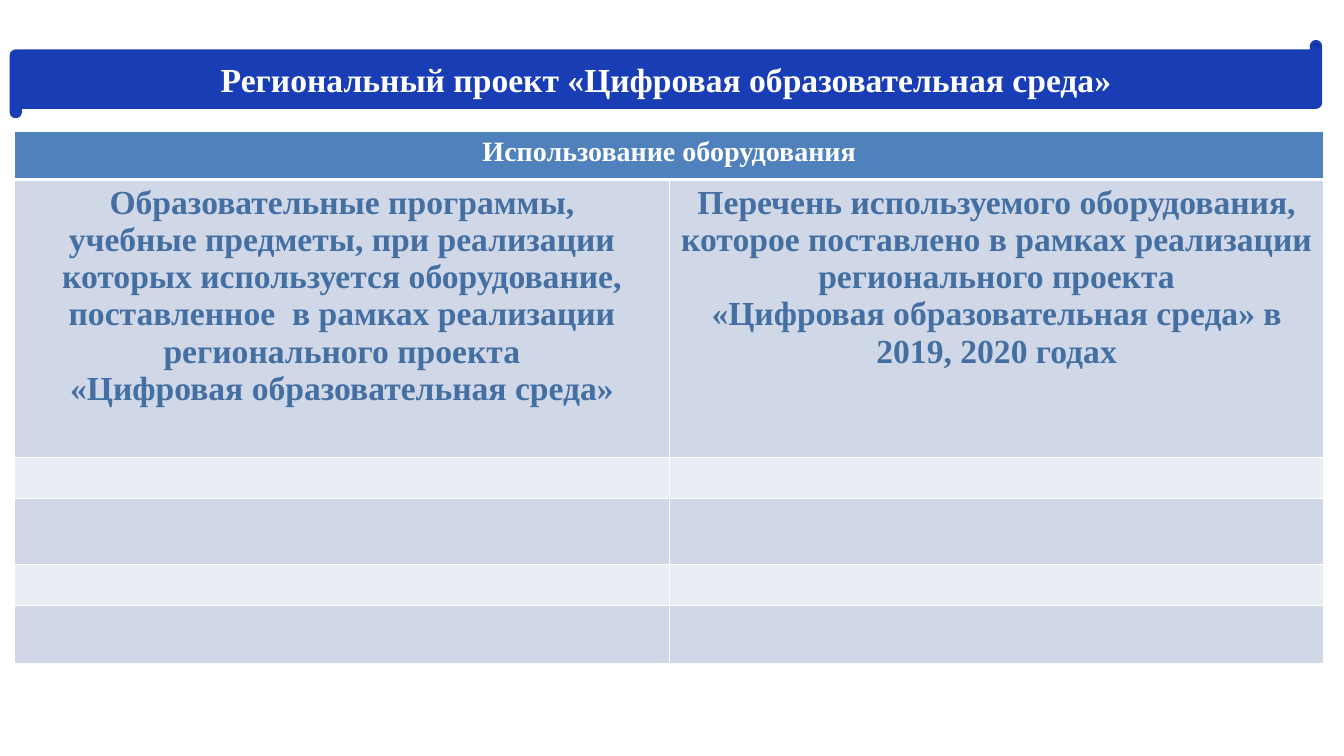
from lxml import etree
from pptx import Presentation
from pptx.dml.color import RGBColor
from pptx.enum import shapes, text
from pptx.oxml import ns
from pptx.util import Pt

FONT = "Times New Roman"
WHITE = RGBColor(0xFF, 0xFF, 0xFF)
BANNER_BLUE = RGBColor(0x18, 0x3D, 0xB4)
HEADER_BLUE = RGBColor(0x4F, 0x81, 0xBD)
TEXT_BLUE = RGBColor(0x44, 0x6F, 0xA2)
BAND_DARK = RGBColor(0xD0, 0xD8, 0xE8)
BAND_LIGHT = RGBColor(0xE9, 0xED, 0xF4)

TITLE = "Региональный проект «Цифровая образовательная среда»"
TABLE_HEADING = "Использование оборудования"
COLUMN_HEADINGS = (
    (
        "Образовательные программы,",
        "учебные предметы, при реализации которых используется оборудование, "
        "поставленное  в рамках реализации регионального проекта",
        "«Цифровая образовательная среда»",
    ),
    (
        "Перечень используемого оборудования, которое поставлено "
        "в рамках реализации регионального проекта",
        "«Цифровая образовательная среда» в 2019, 2020 годах",
    ),
)
ROW_HEIGHTS = (34.3, 198.4, 28.8, 47.5, 28.8, 41.4)


def write(frame, *lines, size=24, color=WHITE, bold=True):
    """Fill a text frame with one centred paragraph per line."""
    for index, line in enumerate(lines):
        para = frame.add_paragraph() if index else frame.paragraphs[0]
        para.alignment = text.PP_ALIGN.CENTER
        span = para.add_run()
        span.text = line
        span.font.name = FONT
        span.font.size = Pt(size)
        span.font.bold = bold
        span.font.color.rgb = color


def add_border(cell, side, width):
    props = cell._tc.get_or_add_tcPr()
    line = etree.SubElement(props, ns.qn(f"a:ln{side}"), w=str(Pt(width)))
    fill = etree.SubElement(line, ns.qn("a:solidFill"))
    etree.SubElement(fill, ns.qn("a:srgbClr"), val=str(WHITE))


def paint_cell(cell, color, top=1, bottom=1):
    for side, width in (("L", 1), ("R", 1), ("T", top), ("B", bottom)):
        add_border(cell, side, width)
    cell.fill.solid()
    cell.fill.fore_color.rgb = color


def add_banner(page, left, top, width, height):
    """Lay the title over a scroll of the same size."""
    box = Pt(left), Pt(top), Pt(width), Pt(height)
    scroll = page.shapes.add_shape(shapes.MSO_SHAPE.HORIZONTAL_SCROLL, *box)
    scroll.shadow.inherit = False
    scroll.fill.solid()
    scroll.fill.fore_color.rgb = BANNER_BLUE
    scroll.line.color.rgb = BANNER_BLUE
    scroll.line.width = Pt(2)

    title = page.shapes.title
    title.left, title.top, title.width, title.height = box
    title.text_frame.vertical_anchor = text.MSO_ANCHOR.MIDDLE
    title.text_frame.word_wrap = True
    write(title.text_frame, TITLE)
    title.element.addprevious(scroll.element)


def add_equipment_table(page, left, top, width):
    table = page.shapes.add_table(
        len(ROW_HEIGHTS), len(COLUMN_HEADINGS),
        Pt(left), Pt(top), Pt(width), Pt(sum(ROW_HEIGHTS)),
    ).table
    for row, height in zip(table.rows, ROW_HEIGHTS):
        row.height = Pt(height)

    for index, row in enumerate(table.rows):
        band = BAND_DARK if index % 2 else BAND_LIGHT
        for cell in row.cells:
            paint_cell(
                cell,
                band if index else HEADER_BLUE,
                top=3 if index == 1 else 1,
                bottom=1 if index else 3,
            )

    heading = table.cell(0, 0)
    heading.merge(table.cell(0, len(COLUMN_HEADINGS) - 1))
    write(heading.text_frame, TABLE_HEADING, size=20)
    for column, lines in enumerate(COLUMN_HEADINGS):
        write(table.cell(1, column).text_frame, *lines, color=TEXT_BLUE)


def main():
    deck = Presentation()
    deck.slide_width, deck.slide_height = Pt(960), Pt(540)
    page = deck.slides.add_slide(deck.slide_layouts.get_by_name("Title Only"))
    add_banner(page, left=7.9, top=29.5, width=935.5, height=54)
    add_equipment_table(page, left=10.4, top=93.9, width=935.3)
    deck.save("out.pptx")


if __name__ == "__main__":
    main()
